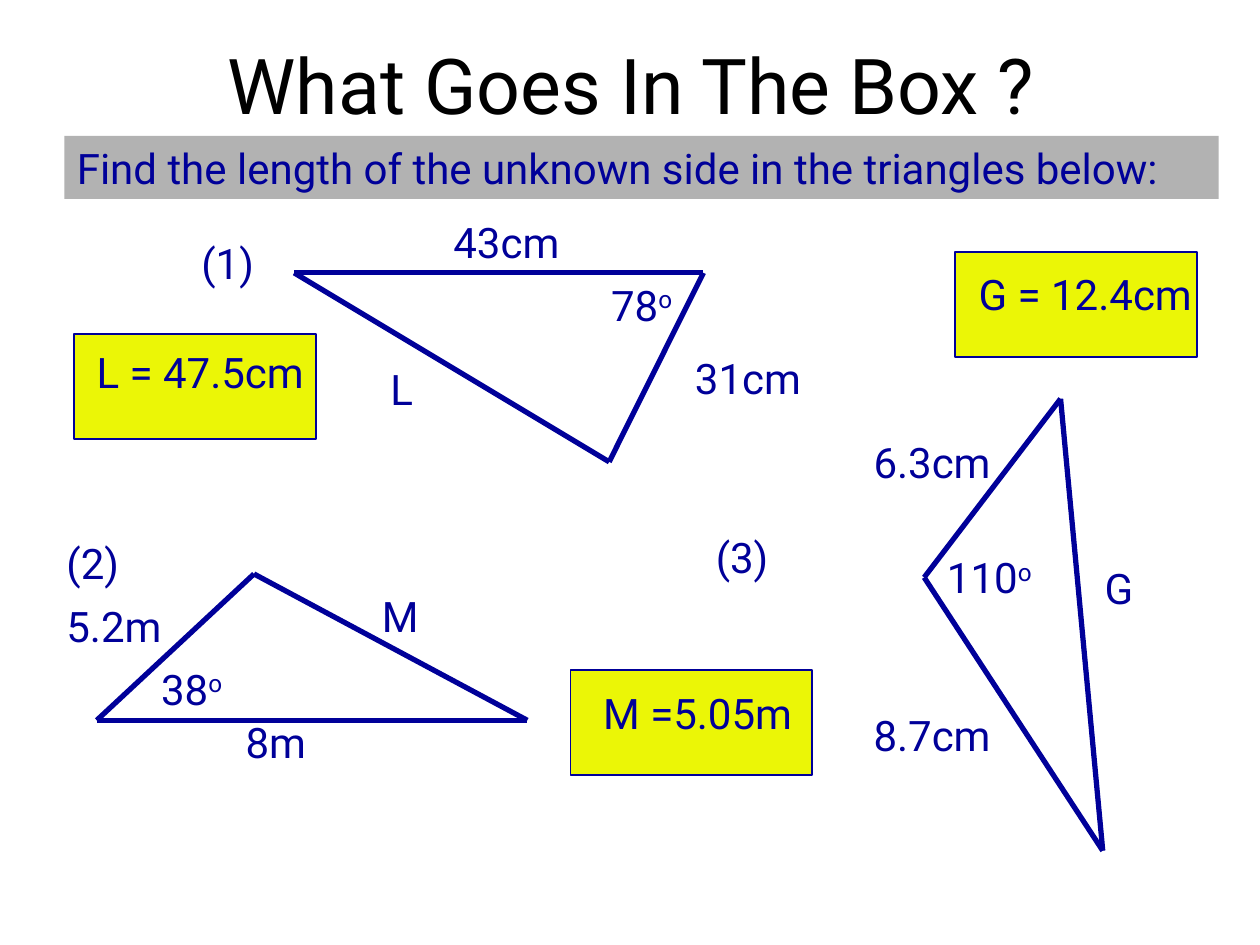
from lxml import etree
from pptx import Presentation
from pptx.dml.color import RGBColor
from pptx.enum.shapes import MSO_CONNECTOR, MSO_SHAPE
from pptx.enum.text import MSO_ANCHOR, MSO_AUTO_SIZE, PP_ALIGN
from pptx.oxml.ns import qn
from pptx.util import Cm, Pt

RECTANGLE = MSO_SHAPE.RECTANGLE
STRAIGHT = MSO_CONNECTOR.STRAIGHT
MIDDLE = MSO_ANCHOR.MIDDLE
CENTER, LEFT = PP_ALIGN.CENTER, PP_ALIGN.LEFT
NO_FIT = MSO_AUTO_SIZE.NONE

BLACK = RGBColor(0x00, 0x00, 0x00)
NAVY = RGBColor(0x00, 0x00, 0x99)
GREY = RGBColor(0xB2, 0xB2, 0xB2)
YELLOW = RGBColor(0xEB, 0xF6, 0x06)

FONT = "Roboto"
TITLE_ONLY = 5
LABEL_HEIGHT = 1.27
ANSWER_SIZE = (4.87, 2.12)

# Each problem: triangle corners, then labels as (text, left, top, width) in cm
PROBLEMS = [
    ([(5.93, 5.5), (14.18, 5.5), (12.28, 9.31)],
     [("(1)", 3.81, 4.66, 1.9), ("78°", 12.07, 5.5, 1.9),
      ("43cm", 8.89, 4.23, 2.75), ("31cm", 13.76, 6.99, 2.95),
      ("L", 7.62, 7.2, 2.54)]),
    ([(1.95, 14.52), (10.63, 14.52), (5.12, 11.57)],
     [("(2)", 1.09, 10.71, 1.9), ("8m", 4.7, 14.32, 2.75),
      ("5.2m", 1.09, 11.98, 2.54), ("38°", 3.0, 13.25, 1.9),
      ("M", 7.45, 11.78, 2.33)]),
    ([(21.38, 8.04), (18.63, 11.64), (22.23, 17.15)],
     [("(3)", 14.18, 10.58, 1.9), ("110°", 18.84, 11.0, 2.54),
      ("6.3cm", 17.36, 8.68, 3.18), ("8.7cm", 17.36, 14.18, 2.97),
      ("G", 22.02, 11.22, 2.11)]),
]

# Each answer: text, its left, top and width, then the left and top of its box
ANSWERS = [
    ("L = 47.5cm", 1.7, 6.86, 5.38, 1.5, 6.73),
    ("M =5.05m", 11.91, 13.74, 4.78, 11.5, 13.51),
    ("G = 12.4cm", 19.48, 5.29, 4.87, 19.26, 5.08),
]


def format_run(r, size=24, color=NAVY):
    r.font.name = FONT
    r.font.size = Pt(size)
    r.font.color.rgb = color


def add_label(shapes, text, left, top, width):
    """Text box; a closing degree sign is set as a raised letter o."""
    s = shapes.add_textbox(Cm(left), Cm(top), Cm(width), Cm(LABEL_HEIGHT))
    tf = s.text_frame
    tf.word_wrap = True
    p = tf.paragraphs[0]
    p.text = text.rstrip("°")
    if text.endswith("°"):
        r = p.add_run()
        r.text = "o"
        r.font._element.set("baseline", "30000")
    for r in p.runs:
        format_run(r)


def add_side(shapes, start, end):
    s = shapes.add_connector(STRAIGHT, *map(Cm, start + end))
    s.line.color.rgb = NAVY
    s.line.width = Pt(3)
    etree.SubElement(s._element.spPr, qn("a:effectLst"))


def add_problem(slide, corners, labels):
    shapes = slide.shapes.add_group_shape().shapes
    for i, corner in enumerate(corners):
        add_side(shapes, corners[i - 1], corner)
    for label in labels:
        add_label(shapes, *label)


def add_box(slide, left, top, width, height, fill):
    s = slide.shapes.add_shape(RECTANGLE, Cm(left), Cm(top), Cm(width), Cm(height))
    s.shadow.inherit = False
    s.fill.solid()
    s.fill.fore_color.rgb = fill
    s.line.fill.background()
    return s


def add_title(slide, text):
    s = slide.shapes.title
    s.left, s.top, s.width, s.height = Cm(1.7), Cm(0.84), Cm(22.45), Cm(1.7)
    tf = s.text_frame
    tf.text = text
    tf.auto_size = NO_FIT
    tf.vertical_anchor = MIDDLE
    p = tf.paragraphs[0]
    p.alignment = CENTER
    format_run(p.runs[0], 44, BLACK)


def add_instruction(slide, text):
    s = add_box(slide, 1.3, 2.74, 23.27, 1.27, GREY)
    tf = s.text_frame
    tf.text = text
    p = tf.paragraphs[0]
    p.alignment = LEFT
    format_run(p.runs[0])


def add_answer(slide, text, left, top, width, box_left, box_top):
    s = add_box(slide, box_left, box_top, *ANSWER_SIZE, YELLOW)
    s.line.color.rgb = NAVY
    s.line.width = Pt(1)
    add_label(slide.shapes, text, left, top, width)


def main():
    prs = Presentation()
    prs.slide_width, prs.slide_height = Cm(25.4), Cm(19.05)
    slide = prs.slides.add_slide(prs.slide_layouts[TITLE_ONLY])

    # Heading
    add_title(slide, "What Goes In The Box ? ")
    add_instruction(slide, "Find the length of the unknown side in the triangles below:")

    # Triangles with their labels
    for corners, labels in PROBLEMS:
        add_problem(slide, corners, labels)

    # Answer boxes
    for answer in ANSWERS:
        add_answer(slide, *answer)

    prs.save("out.pptx")


if __name__ == "__main__":
    main()
